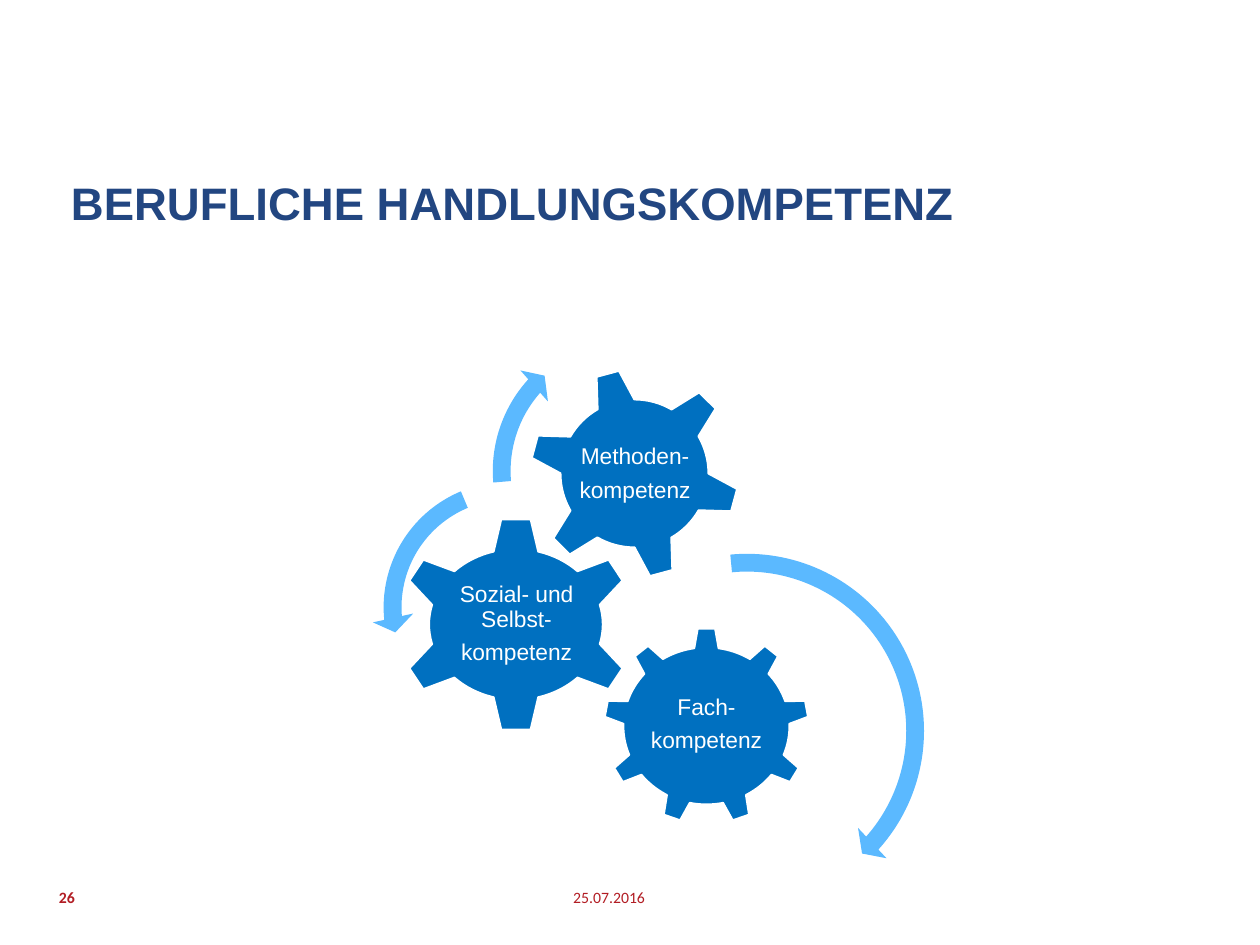
from pptx import Presentation
from pptx import util as u
from pptx.dml.color import RGBColor
from pptx.enum import shapes, text

PX = u.Inches(1) // 126
GEAR_BLUE, ARROW_BLUE, WHITE = "0070C0", "5BB9FF", "FFFFFF"
TITLE_BLUE, FOOTER_RED = "224681", "B21D24"
LEFT, CENTER, RIGHT = text.PP_ALIGN.LEFT, text.PP_ALIGN.CENTER, text.PP_ALIGN.RIGHT
SHAPE = shapes.MSO_SHAPE


def color(value):
    return RGBColor.from_string(value)


def add_text(box, lines, font, size, ink, align, inset=0, bold=False,
             anchor=text.MSO_ANCHOR.MIDDLE, spacing=None, after=0):
    frame = slide.shapes.add_textbox(*[n * PX for n in box]).text_frame
    frame.word_wrap = True
    frame.vertical_anchor = anchor
    frame.margin_left = frame.margin_right = inset * PX
    frame.margin_top = frame.margin_bottom = inset // 2 * PX if inset > 3 else inset * PX
    frame.text = "\n".join(lines)
    for paragraph in frame.paragraphs:
        paragraph.alignment = align
        paragraph.line_spacing = spacing
        paragraph.space_after = u.Pt(after)
        for run in paragraph.runs:
            run.font.name = font
            run.font.size = u.Pt(size)
            run.font.bold = bold
            run.font.color.rgb = color(ink)


deck = Presentation()
deck.slide_width, deck.slide_height = 1260 * PX, 945 * PX
slide = deck.slides.add_slide(deck.slide_layouts[6])

add_text((59, 175, 963, 118), ["BERUFLICHE HANDLUNGSKOMPETENZ"], "Arial", 26,
         TITLE_BLUE, LEFT, inset=12, bold=True, anchor=text.MSO_ANCHOR.TOP, spacing=0.9)

competences = [
    (SHAPE.GEAR_9, (604, 628, 205, 196), 0, (644, 674, 125, 101), ["Fach-", "kompetenz"]),
    (SHAPE.GEAR_6, (397, 517, 238, 215), 0, (455, 571, 123, 106),
     ["Sozial- und Selbst-", "kompetenz"]),
    (SHAPE.GEAR_6, (529, 368, 211, 211), 345, (576, 415, 118, 118),
     ["Methoden-", "kompetenz"]),
]
for kind, box, rotation, label_box, label in competences:
    gear = slide.shapes.add_shape(kind, *[n * PX for n in box])
    gear.shadow.inherit = False
    gear.rotation = rotation
    gear.fill.solid()
    gear.fill.fore_color.rgb = color(GEAR_BLUE)
    gear.line.color.rgb = color(WHITE)
    gear.line.width = u.Pt(1)
    add_text(label_box, label, "Arial", 13, WHITE, CENTER, inset=2, spacing=0.9, after=5)

turns = [
    (SHAPE.CIRCULAR_ARROW, (558, 542, 378), (0.047, 2.99, 25.089, 158.77, 0.055)),
    (SHAPE.LEFT_CIRCULAR_ARROW, (372, 470, 275), (0.065, 4.3, 104.891, 148.378, 0.075)),
    (SHAPE.CIRCULAR_ARROW, (481, 323, 296), (0.06, 3.941, 133.138, 105.082, 0.07)),
]
for kind, (left, top, side), bends in turns:
    arrow = slide.shapes.add_shape(kind, left * PX, top * PX, side * PX, side * PX)
    arrow.shadow.inherit = False
    arrow.fill.solid()
    arrow.fill.fore_color.rgb = color(ARROW_BLUE)
    arrow.line.fill.background()
    for index, bend in enumerate(bends):
        arrow.adjustments[index] = bend

for left, words, align, bold in [(362, "25.07.2016", RIGHT, False), (59, "26", LEFT, True)]:
    add_text((left, 872, 283, 50), [words], "Calibri", 9, FOOTER_RED, align, bold=bold)

deck.save("out.pptx")
